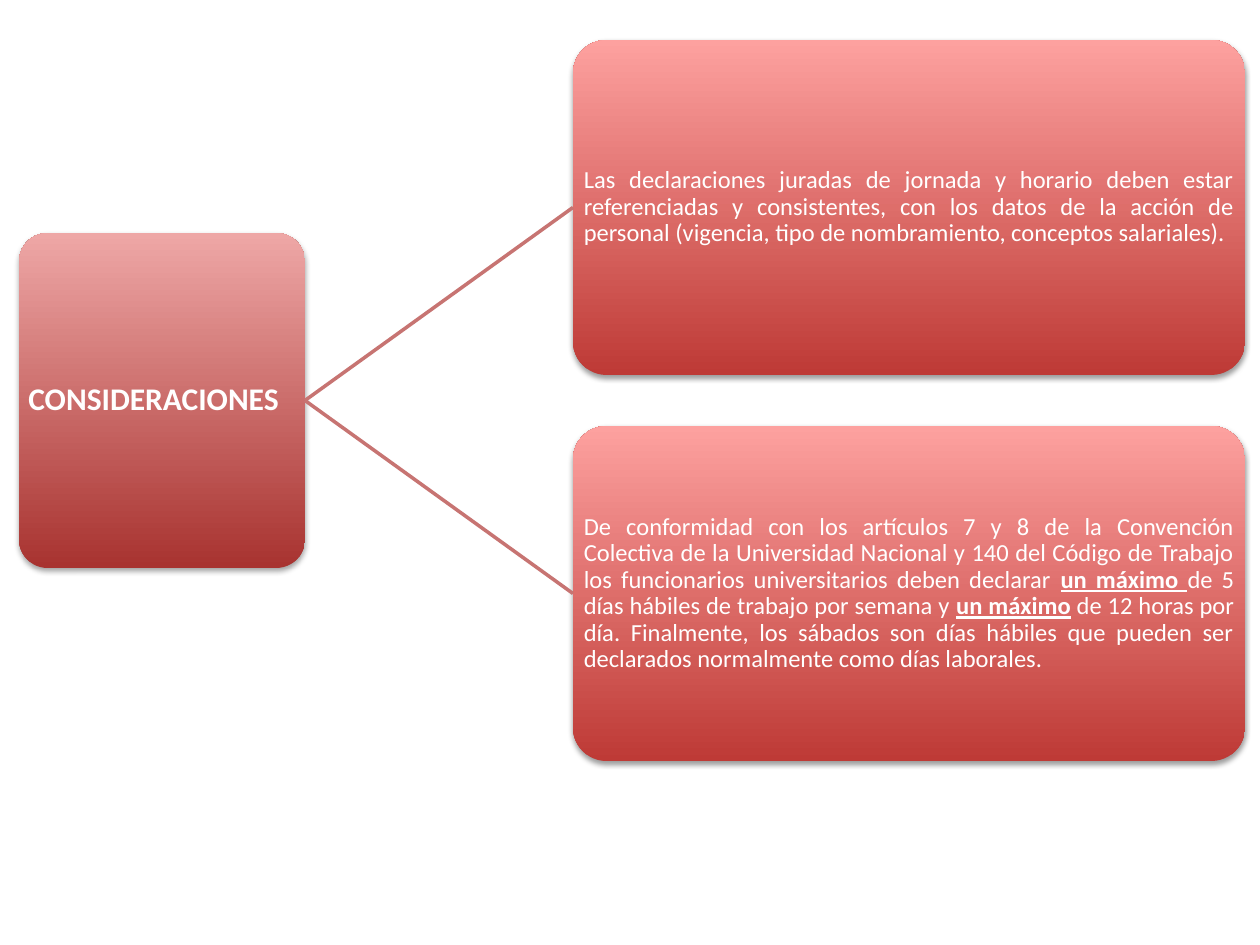
from lxml import etree
from pptx import Presentation
from pptx import util as u
from pptx.dml.color import RGBColor
from pptx.enum import shapes, text
from pptx.oxml.ns import qn

PX = 914400 / 126
HUES = {"root_low": "A83330", "root_top": "EEA7A6", "leaf_low": "BE3A36",
        "leaf_top": "FDA19F", "line": "C77472", "text": "FFFFFF", "shade": "000000"}
HEIGHT, GAP = 335, 51
ROOT = [("CONSIDERACIONES", True, False)]
LEAVES = [
    [("Las declaraciones juradas de jornada y horario deben estar referenciadas y "
      "consistentes, con los datos de la acción de personal (vigencia, tipo de "
      "nombramiento, conceptos salariales).", False, False)],
    [("De conformidad con los artículos 7 y 8 de la Convención Colectiva de la "
      "Universidad Nacional y 140 del Código de Trabajo los funcionarios "
      "universitarios deben declarar ", False, False),
     ("un máximo ", True, True),
     ("de 5 días hábiles de trabajo por semana y ", False, False),
     ("un máximo", True, True),
     (" de 12 horas por día. Finalmente, los sábados son días hábiles que pueden ser "
      "declarados normalmente como días laborales.", False, False)],
]


def px(n):
    return u.Emu(round(n * PX))


def rgb(name):
    return RGBColor.from_string(HUES[name])


def put(item, values):
    for key, value in values.items():
        setattr(item, key, value)


def effects(shape):
    """Replace the theme's effects with an empty list and return it."""
    props = shape._element.spPr
    return etree.SubElement(props, qn("a:effectLst"))


def shade(shape, alpha, dist):
    drop = etree.SubElement(effects(shape), qn("a:outerShdw"), blurRad=str(u.Pt(3.1)),
                            dist=str(u.Pt(dist)), dir="5400000", rotWithShape="0")
    color = etree.SubElement(drop, qn("a:srgbClr"), val=HUES["shade"])
    etree.SubElement(color, qn("a:alpha"), val=str(alpha * 1000))


def card(slide, box, runs, kind, size, alpha, dist):
    shape = slide.shapes.add_shape(shapes.MSO_SHAPE.ROUNDED_RECTANGLE, *map(px, box))
    shape.adjustments[0] = 0.1
    shape.fill.gradient()
    shape.fill.gradient_angle = 90
    for stop, end in zip(shape.fill.gradient_stops, ("low", "top")):
        stop.color.rgb = rgb(f"{kind}_{end}")
    shape.line.fill.background()
    shade(shape, alpha, dist)

    frame = shape.text_frame
    put(frame, {"word_wrap": True, "vertical_anchor": text.MSO_ANCHOR.MIDDLE})
    put(frame, {f"margin_{side}": px(1) for side in ("left", "top", "right", "bottom")})
    para = frame.paragraphs[0]
    put(para, {"alignment": text.PP_ALIGN.JUSTIFY, "line_spacing": 0.9})
    for words, bold, under in runs:
        run = para.add_run()
        run.text = words
        put(run.font, {"name": "Calibri", "size": u.Pt(size), "bold": bold,
                       "underline": under})
        run.font.color.rgb = rgb("text")
    return shape


def link(slide, start, end):
    line = slide.shapes.add_connector(shapes.MSO_CONNECTOR.STRAIGHT, 0, 0, 0, 0)
    line.begin_connect(start, 3)
    line.end_connect(end, 1)
    line.line.color.rgb = rgb("line")
    line.line.width = u.Pt(2)
    effects(line)


def tree(slide, left, top, width):
    """Draw the root, centred on the column of leaves it links to."""
    step = HEIGHT + GAP
    mid = top + step * (len(LEAVES) - 1) / 2
    root = card(slide, (left, mid, 286, HEIGHT), ROOT, "root", 18, 35, 1.8)
    wide = 672
    for i, runs in enumerate(LEAVES):
        box = (left + width - wide, top + i * step, wide, HEIGHT)
        leaf = card(slide, box, runs, "leaf", 14, 38, 1.6)
        link(slide, root, leaf)


def main():
    deck = Presentation()
    put(deck, {"slide_width": px(1260), "slide_height": px(945)})
    slide = deck.slides.add_slide(deck.slide_layouts[6])
    tree(slide, 19, 40, 1226)
    deck.save("out.pptx")


if __name__ == "__main__":
    main()
